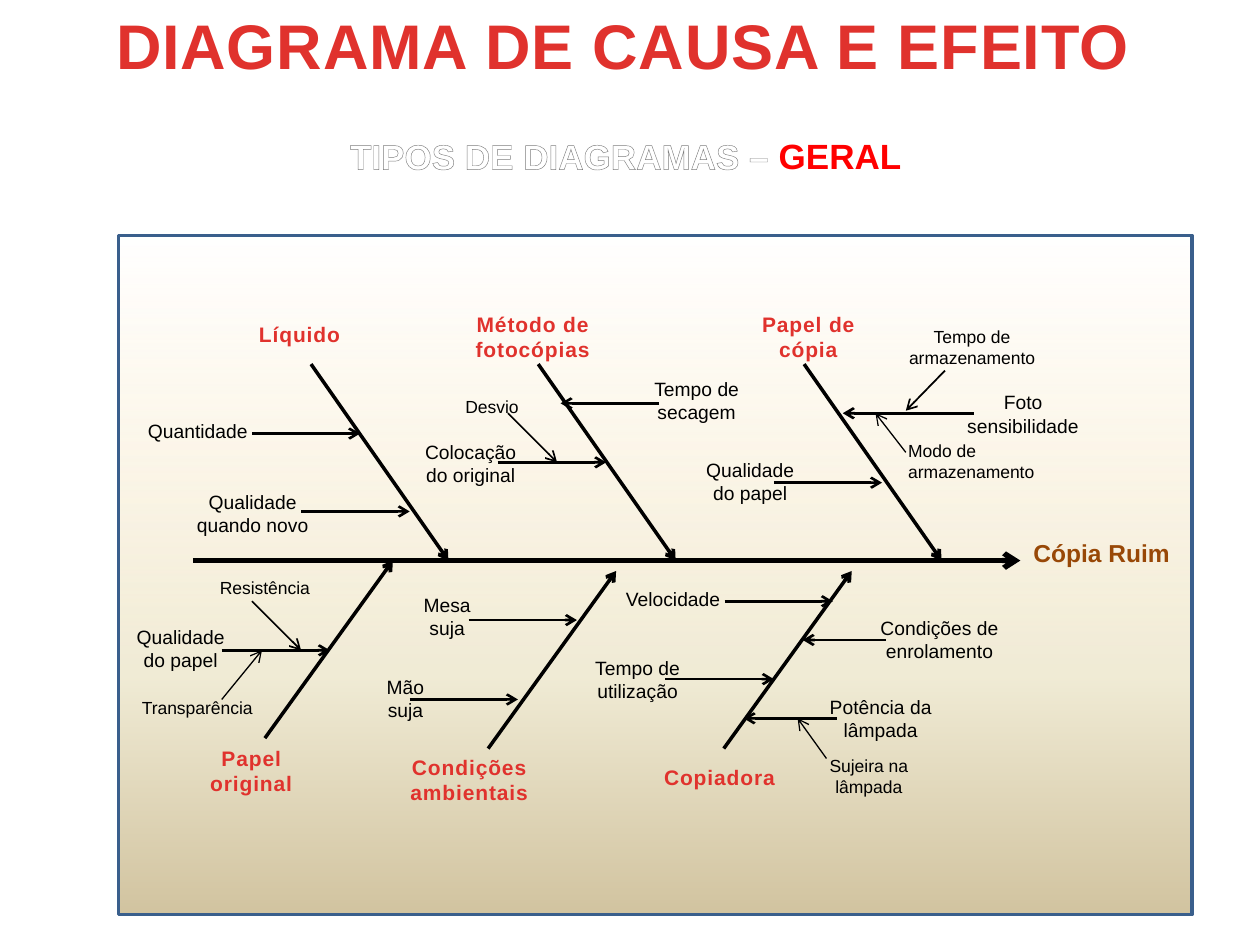
from typing import NamedTuple

from lxml.etree import SubElement
from pptx import Presentation
from pptx.dml.color import RGBColor
from pptx.enum.shapes import MSO_CONNECTOR as Link, MSO_SHAPE as Shape
from pptx.enum.text import MSO_ANCHOR as Anchor, MSO_AUTO_SIZE as Fit, PP_ALIGN as Align
from pptx.oxml import parse_xml
from pptx.oxml.ns import nsdecls, qn
from pptx.util import Cm, Pt

RED, BLACK, BROWN = "E0322D", "000000", "984807"


class Arrow(NamedTuple):
    x1: float
    y1: float
    x2: float
    y2: float
    width: float


class Twig(NamedTuple):
    start: float
    end: float
    y: float


class Label(NamedTuple):
    text: str
    x: float
    y: float
    width: float
    size: int = 11
    align: Align = Align.CENTER


# Spine and bones: all upper bones are parallel, and so are the lower ones
SPINE = Arrow(3.89, 11.3, 20.57, 11.3, 3)
TOPS = [6.27, 10.85, 16.21]
TIPS = [(7.92, 11.3), (12.42, 11.51), (17.17, 11.51)]
BONES = [Arrow(x, 7.34, x + 2.77, 11.3, 2) for x in TOPS]
BONES += [Arrow(x - 2.58, y + 3.58, x, y, 2) for x, y in TIPS]

# Level arrows that reach a bone
TWIGS = [
    Twig(5.08, 7.26, 8.74), Twig(6.07, 8.26, 10.31),
    Twig(13.28, 11.3, 8.13), Twig(10.03, 12.22, 9.32),
    Twig(19.63, 16.99, 8.33), Twig(15.6, 17.78, 9.73),
    Twig(4.47, 6.65, 13.11),
    Twig(9.45, 11.63, 12.5), Twig(8.26, 10.44, 14.1),
    Twig(14.61, 16.79, 12.12), Twig(17.86, 16.18, 12.9),
    Twig(13.41, 15.6, 13.69), Twig(16.87, 14.99, 14.48),
]

# Slanted arrows that reach a twig
SLANTS = [
    Arrow(19.05, 7.47, 18.26, 8.28, 1),
    Arrow(10.24, 8.33, 11.23, 9.32, 1),
    Arrow(5.08, 12.12, 6.07, 13.11, 1),
    Arrow(16.66, 15.29, 16.08, 14.48, 0.75),
    Arrow(4.47, 14.1, 5.28, 13.11, 0.75),
    Arrow(18.26, 9.12, 17.65, 8.33, 0.75),
]

GROUPS = [
    Label("Líquido", 4.95, 6.35, 2.18, 12),
    Label("Método de\nfotocópias", 9.32, 6.15, 2.84, 12),
    Label("Papel de\ncópia", 15.09, 6.15, 2.41, 12),
    Label("Papel\noriginal", 3.96, 14.91, 2.21, 12),
    Label("Condições\nambientais", 8, 15.09, 2.92, 12),
    Label("Copiadora", 13.11, 15.29, 2.79, 12),
]

CAUSES = [
    Label("Quantidade", 2.72, 8.33, 2.54),
    Label("Qualidade\nquando novo", 3.71, 9.75, 2.77),
    Label("Desvio", 9.12, 7.85, 1.6, 10),
    Label("Colocação\ndo original", 8.31, 8.74, 2.36),
    Label("Tempo de\nsecagem", 12.9, 7.47, 2.29),
    Label("Qualidade\ndo papel", 13.97, 9.12, 2.31),
    Label("Tempo de\narmazenamento", 18.06, 6.45, 3.07, 10),
    Label("Foto\nsensibilidade", 19.23, 7.75, 2.79),
    Label("Modo de\narmazenamento", 18.06, 8.74, 3.07, 10, Align.LEFT),
    Label("Resistência", 4.17, 11.51, 2.34, 10),
    Label("Qualidade\ndo papel", 2.49, 12.47, 2.31),
    Label("Transparência", 2.59, 13.92, 2.77, 10),
    Label("Mesa\nsuja", 8.28, 11.84, 1.47),
    Label("Mão\nsuja", 7.54, 13.49, 1.27),
    Label("Velocidade", 12.34, 11.71, 2.46),
    Label("Tempo de\nutilização", 11.71, 13.11, 2.29),
    Label("Condições de\nenrolamento", 17.48, 12.29, 2.92),
    Label("Potência da\nlâmpada", 16.46, 13.89, 2.59),
    Label("Sujeira na\nlâmpada", 16.46, 15.09, 2.11, 10),
]


def paint(color: str) -> RGBColor:
    return RGBColor.from_string(color)


def style(run, size: float, color: str, bold: bool = False, gap: int = 0) -> None:
    font = run.font
    font.name, font.size, font.bold = "Arial", Pt(size), bold
    font.color.rgb = paint(color)
    if gap:
        run._r.get_or_add_rPr().set("spc", str(gap))


def draw(slide, arrow: Arrow) -> None:
    ends = [Cm(v) for v in arrow[:4]]
    line = slide.shapes.add_connector(Link.STRAIGHT, *ends)
    line.line.color.rgb = paint(BLACK)
    line.line.width = Pt(arrow.width)
    SubElement(line.line._get_or_add_ln(), qn("a:tailEnd"), type="arrow")
    SubElement(line._element.spPr, qn("a:effectLst"))


def write(slide, label: Label, color: str = BLACK, bold: bool = False, gap: int = 0):
    lines = label.text.count("\n") + 1
    high = 0.25 + 0.0425 * label.size * lines
    box = slide.shapes.add_textbox(Cm(label.x), Cm(label.y), Cm(label.width), Cm(high))
    frame = box.text_frame
    frame.text = label.text
    frame.word_wrap = False
    frame.auto_size = Fit.SHAPE_TO_FIT_TEXT
    for para in frame.paragraphs:
        para.alignment = label.align
        for run in para.runs:
            style(run, label.size, color, bold, gap)
    return frame.paragraphs[0]


def add_title(slide) -> None:
    title = slide.shapes.title
    title.left, title.top, title.width, title.height = Cm(1.98), Cm(0), Cm(21.16), Cm(1.8)
    frame = title.text_frame
    frame.text = "DIAGRAMA DE CAUSA E EFEITO"
    frame.word_wrap = False
    frame.auto_size = Fit.NONE
    frame.vertical_anchor = Anchor.TOP
    frame.paragraphs[0].alignment = Align.CENTER
    style(frame.paragraphs[0].runs[0], 36, RED, True, 50)


def add_subtitle(slide) -> None:
    para = write(slide, Label("TIPOS DE DIAGRAMAS – ", 6.76, 2.59, 11.71, 20), "FFFFFF", True)
    edge = parse_xml(
        f'<a:ln {nsdecls("a")} w="10541"><a:solidFill>'
        '<a:srgbClr val="7D7D7D"/></a:solidFill></a:ln>')
    para.runs[0]._r.get_or_add_rPr().insert(0, edge)
    run = para.add_run()
    run.text = "GERAL"
    style(run, 20, "FF0000", True)


def add_panel(slide) -> None:
    panel = slide.shapes.add_shape(Shape.RECTANGLE, Cm(2.39), Cm(4.75), Cm(21.64), Cm(13.69))
    panel.shadow.inherit = False
    panel.line.color.rgb = paint("3A5F8C")
    panel.line.width = Pt(2)
    panel.fill.gradient()
    fade = panel._element.spPr.find(qn("a:gradFill"))
    fade.getparent().replace(fade, parse_xml(
        f'<a:gradFill {nsdecls("a")} rotWithShape="1"><a:gsLst>'
        '<a:gs pos="0"><a:srgbClr val="FFEFD1"><a:alpha val="0"/></a:srgbClr></a:gs>'
        '<a:gs pos="65000"><a:srgbClr val="F0EBD5"/></a:gs>'
        '<a:gs pos="100000"><a:srgbClr val="D1C39F"/></a:gs>'
        '</a:gsLst><a:lin ang="5400000" scaled="0"/></a:gradFill>'))


def main() -> None:
    deck = Presentation()
    deck.slide_width, deck.slide_height = Cm(25.4), Cm(19.05)
    slide = deck.slides.add_slide(deck.slide_layouts[5])
    add_title(slide)
    add_subtitle(slide)
    add_panel(slide)

    # Fishbone
    twigs = [Arrow(t.start, t.y, t.end, t.y, 1.5) for t in TWIGS]
    for arrow in [SPINE, *BONES, *twigs, *SLANTS]:
        draw(slide, arrow)

    # Effect, cause groups and causes
    write(slide, Label("Cópia Ruim", 20.57, 10.72, 3.28, 14), BROWN, True)
    for label in GROUPS:
        write(slide, label, RED, True, 50)
    for label in CAUSES:
        write(slide, label)
    deck.save("out.pptx")


if __name__ == "__main__":
    main()
